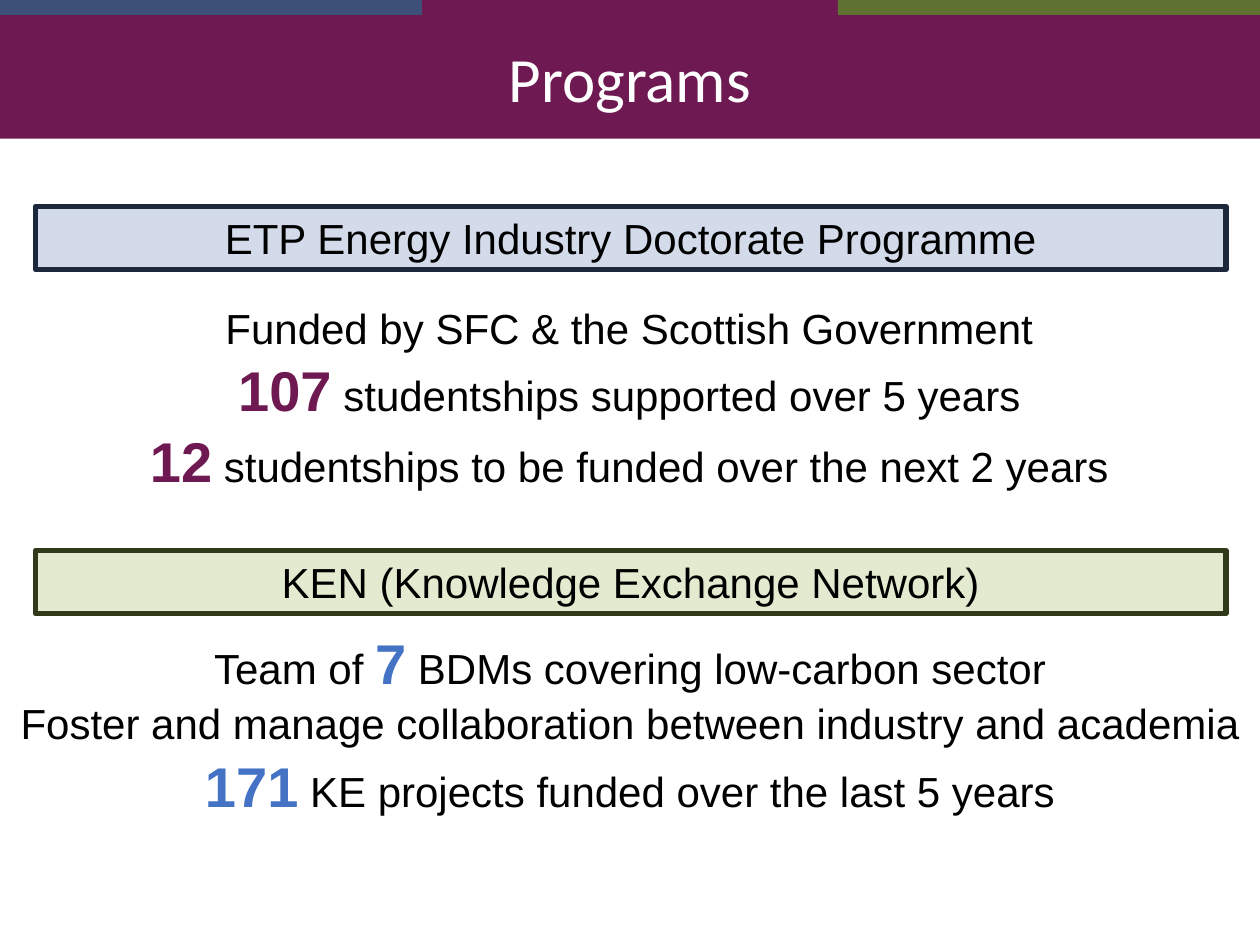
from dataclasses import dataclass
from typing import Any

from pptx import Presentation
from pptx.dml.color import RGBColor
from pptx.enum.shapes import MSO_SHAPE as Preset
from pptx.enum.text import MSO_ANCHOR as Anchor, PP_ALIGN as Align
from pptx.util import Inches, Pt

PLUM, BLUE, BLACK, WHITE = "6F1952", "4472C4", "000000", "FFFFFF"


def color(hex_code):
    return RGBColor.from_string(hex_code)


def add_text(paragraph, text, font="Arial", size=24, ink=BLACK, bold=False):
    run = paragraph.add_run()
    run.text = text
    run.font.name = font
    run.font.size = Pt(size)
    run.font.bold = bold
    run.font.color.rgb = color(ink)


@dataclass
class ProgramSlide:
    slide: Any
    line_spacing: float = 1.05
    border: float = 3
    figure_size: int = 32

    def bar(self, left, top, width, height, fill, line=None):
        shape = self.slide.shapes.add_shape(
            Preset.RECTANGLE, *map(Inches, (left, top, width, height)))
        shape.shadow.inherit = False
        shape.fill.solid()
        shape.fill.fore_color.rgb = color(fill)
        if line:
            shape.line.color.rgb = color(line)
            shape.line.width = Pt(self.border)
        else:
            shape.line.fill.background()
        return shape

    def label(self, shape, text, **style):
        frame = shape.text_frame
        frame.word_wrap = True
        frame.vertical_anchor = Anchor.MIDDLE
        frame.paragraphs[0].alignment = Align.CENTER
        add_text(frame.paragraphs[0], text, **style)

    def heading(self, top, text, fill, line):
        self.label(self.bar(0.28, top, 9.45, 0.5, fill, line), text)

    def facts(self, left, top, width, lines, accent):
        """Each line is (lead text, highlighted figure, remaining text)."""
        box = self.slide.shapes.add_textbox(
            *map(Inches, (left, top, width, 1.58)))
        frame = box.text_frame
        frame.word_wrap = True
        for index, (lead, figure, rest) in enumerate(lines):
            paragraph = frame.add_paragraph() if index else frame.paragraphs[0]
            paragraph.alignment = Align.CENTER
            paragraph.line_spacing = self.line_spacing
            if lead:
                add_text(paragraph, lead)
            if figure:
                add_text(paragraph, figure, size=self.figure_size,
                         ink=accent, bold=True)
            if rest:
                add_text(paragraph, rest)


def main():
    deck = Presentation()
    deck.slide_width, deck.slide_height = Inches(10), Inches(7.5)
    page = ProgramSlide(deck.slides.add_slide(deck.slide_layouts[6]))

    # Color strip and title band
    for left, fill in ((0, "3C5078"), (3.35, PLUM), (6.65, "5F7232")):
        page.bar(left, 0, 3.35, 0.12, fill)
    title_band = page.bar(0, 0.12, 10, 0.98, PLUM)
    page.label(title_band, "Programs", font="Calibri", size=36, ink=WHITE)

    # Doctorate programme
    page.heading(1.64, "ETP Energy Industry Doctorate Programme",
                 "D3DAE9", "1E283C")
    page.facts(1.06, 2.33, 7.87, [
        ("Funded by SFC & the Scottish Government", "", ""),
        ("", "107", " studentships supported over 5 years"),
        ("", "12", " studentships to be funded over the next 2 years"),
    ], PLUM)

    # Knowledge exchange
    page.heading(4.37, "KEN (Knowledge Exchange Network)",
                 "E2EACF", "303919")
    page.facts(0, 4.91, 10, [
        ("Team of ", "7", " BDMs covering low-carbon sector"),
        ("Foster and manage collaboration between industry and academia",
         "", ""),
        ("", "171", " KE projects funded over the last 5 years"),
    ], BLUE)

    deck.save("out.pptx")


if __name__ == "__main__":
    main()
